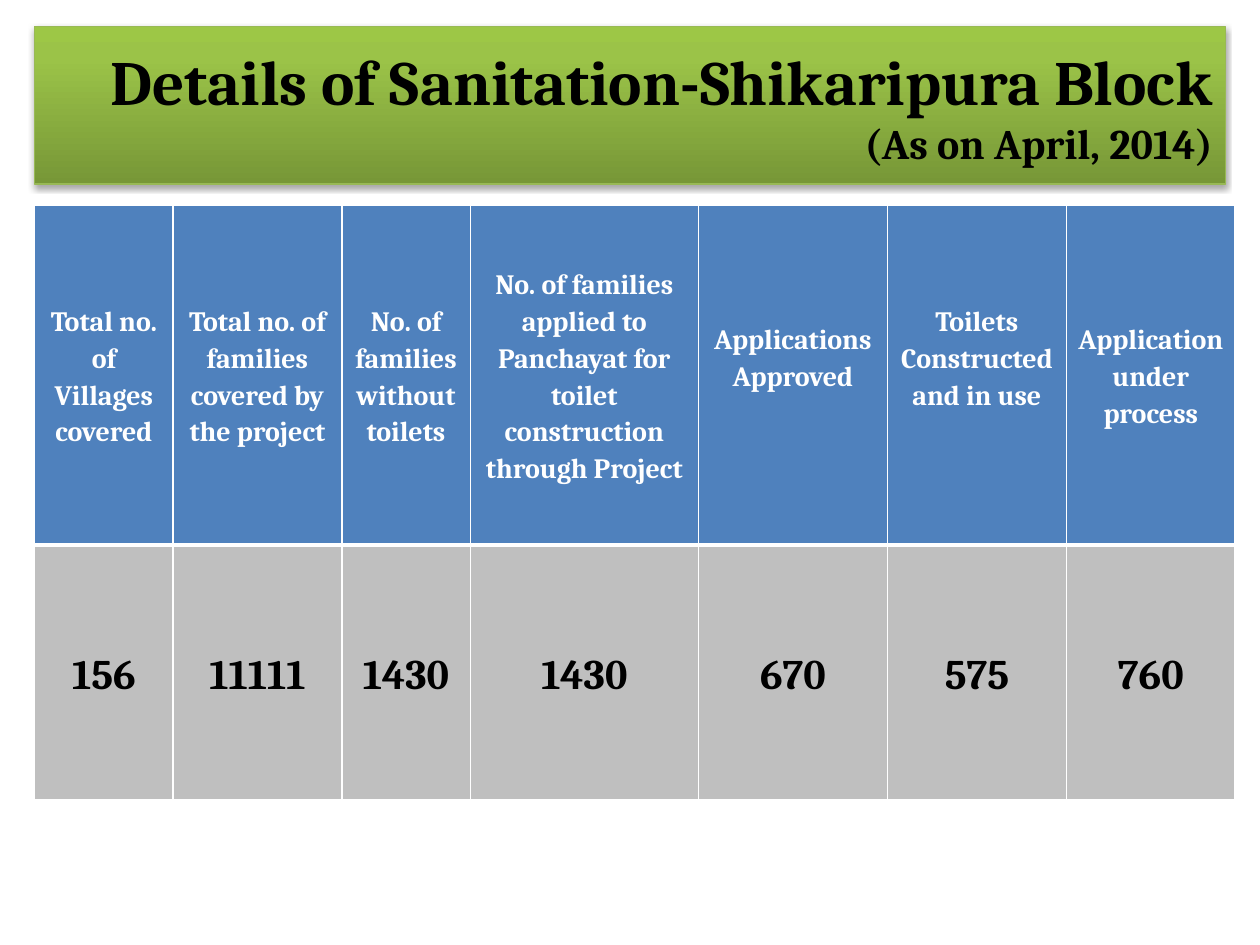
from lxml.etree import SubElement
from pptx import Presentation
from pptx.dml.color import RGBColor
from pptx.enum.text import MSO_ANCHOR, PP_ALIGN
from pptx.oxml import parse_xml
from pptx.oxml.ns import nsdecls, qn
from pptx.util import Cm, Pt

COLORS = {
    "black": "000000",
    "white": "FFFFFF",
    "header": "4F81BD",
    "value": "BFBFBF",
    "title_line": "98B955",
    "green_dark": "779737",
    "green_mid": "9BC348",
    "green_light": "9DC746",
}
MARGINS = {"margin_left": Cm(0.18), "margin_right": Cm(0.18), "margin_top": 0, "margin_bottom": 0}
ONE_LINE = Cm(0.74)


def write_paragraph(paragraph, text, size, color, alignment):
    paragraph.alignment = alignment
    run = paragraph.add_run()
    run.text = text
    run.font.color.rgb = RGBColor.from_string(COLORS[color])
    for name, value in {"name": "Cambria", "size": Pt(size), "bold": True}.items():
        setattr(run.font, name, value)


def add_borders(cell, widths):
    """Draw white cell borders; widths maps L, R, T and B to points."""
    properties = cell._tc.get_or_add_tcPr()
    for index, (side, width) in enumerate(widths.items()):
        line = SubElement(properties, qn(f"a:ln{side}"), w=str(Pt(width)))
        fill = SubElement(line, qn("a:solidFill"))
        SubElement(fill, qn("a:srgbClr"), val=COLORS["white"])
        properties.insert(index, line)


presentation = Presentation()
presentation.slide_width = Cm(25.4)
presentation.slide_height = Cm(19.05)
slide = presentation.slides.add_slide(presentation.slide_layouts[5])

# Title banner
title = slide.shapes.title
banner_place = {"left": Cm(0.7), "top": Cm(0.53), "width": Cm(24), "height": Cm(3.18)}
for name, value in banner_place.items():
    setattr(title, name, value)
title.line.color.rgb = RGBColor.from_string(COLORS["title_line"])
title.line.width = Pt(0.75)

stops = "".join(
    f'<a:gs pos="{percent * 1000}"><a:srgbClr val="{COLORS[color]}"/></a:gs>'
    for percent, color in [(0, "green_dark"), (80, "green_mid"), (100, "green_light")]
)
gradient = parse_xml(
    f'<a:gradFill {nsdecls("a")} rotWithShape="1"><a:gsLst>{stops}</a:gsLst>'
    '<a:lin ang="16200000" scaled="0"/></a:gradFill>'
)
shadow = parse_xml(
    f'<a:effectLst {nsdecls("a")}>'
    f'<a:outerShdw blurRad="{Pt(3.1)}" dist="{Pt(1.8)}" dir="5400000" rotWithShape="0">'
    f'<a:srgbClr val="{COLORS["black"]}"><a:alpha val="35000"/></a:srgbClr>'
    '</a:outerShdw></a:effectLst>'
)
banner_properties = title._element.spPr
banner_properties.find(qn("a:ln")).addprevious(gradient)
banner_properties.append(shadow)

title_frame = title.text_frame
title_frame.vertical_anchor = MSO_ANCHOR.MIDDLE
write_paragraph(title_frame.paragraphs[0], "Details of Sanitation-Shikaripura Block",
                36, "black", PP_ALIGN.RIGHT)
write_paragraph(title_frame.add_paragraph(), "(As on April, 2014)", 24, "black", PP_ALIGN.RIGHT)

# Sanitation table: column width, heading paragraphs, space below heading, value
columns = [
    (2.79, ["Total no. of", "Villages", "covered"], 0, "156"),
    (3.4, ["Total no. of families covered by the project"], 0, "11111"),
    (2.59, ["No. of families", "without", "toilets"], 0, "1430"),
    (4.6, ["No. of families applied to", "Panchayat for",
           "toilet construction through Project"], 0, "1430"),
    (3.81, ["Applications", "Approved"], ONE_LINE, "670"),
    (3.61, ["Toilets Constructed and in use"], ONE_LINE, "575"),
    (3.4, ["Application under process"], 0, "760"),
]
table = slide.shapes.add_table(
    2, len(columns), Cm(0.7), Cm(4.13), Cm(24.2), Cm(11.99)
).table
for row, height in zip(table.rows, [6.86, 5.13]):
    row.height = Cm(height)

for column_index, (width, heading, space_below, value) in enumerate(columns):
    table.columns[column_index].width = Cm(width)
    rows = [
        (heading, 16, "white", "header", space_below, {"L": 1, "R": 1, "T": 1, "B": 3}),
        ([value], 24, "black", "value", 0, {"L": 1, "R": 1, "T": 3, "B": 1}),
    ]
    for row_index, (lines, size, color, fill, bottom, borders) in enumerate(rows):
        cell = table.cell(row_index, column_index)
        cell_format = MARGINS | {"margin_bottom": bottom, "vertical_anchor": MSO_ANCHOR.MIDDLE}
        for name, setting in cell_format.items():
            setattr(cell, name, setting)
        cell.fill.solid()
        cell.fill.fore_color.rgb = RGBColor.from_string(COLORS[fill])
        add_borders(cell, borders)
        for line_index, line in enumerate(lines):
            frame = cell.text_frame
            paragraph = frame.add_paragraph() if line_index else frame.paragraphs[0]
            paragraph.line_spacing = 1.15
            write_paragraph(paragraph, line, size, color, PP_ALIGN.CENTER)

presentation.save("out.pptx")
